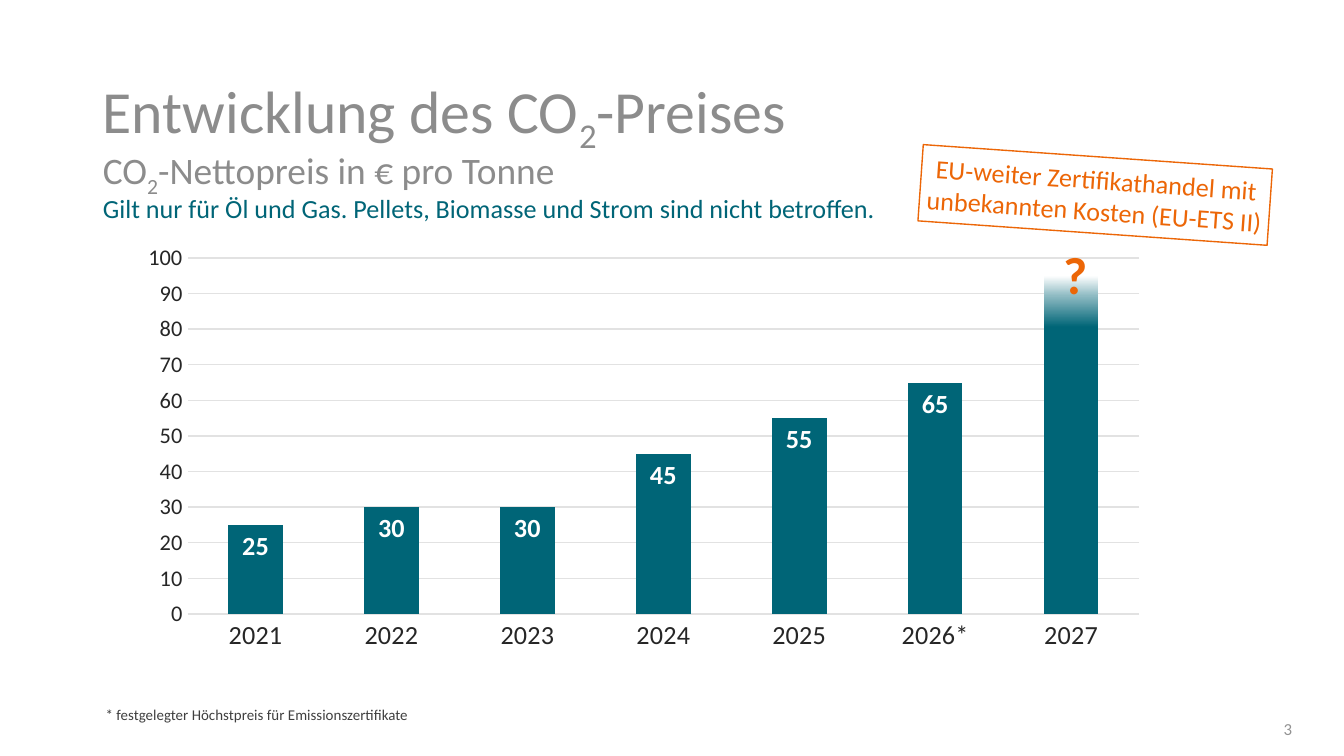
from lxml import etree
from pptx import Presentation
from pptx.chart.data import CategoryChartData
from pptx.dml.color import RGBColor
from pptx.enum.chart import XL_CHART_TYPE, XL_LABEL_POSITION, XL_TICK_MARK
from pptx.enum.shapes import MSO_SHAPE
from pptx.enum.text import MSO_ANCHOR, PP_ALIGN
from pptx.oxml import parse_xml
from pptx.oxml.ns import nsdecls, qn
from pptx.util import Pt

STACKED = XL_CHART_TYPE.COLUMN_STACKED
TOP, MID, LOW = MSO_ANCHOR.TOP, MSO_ANCHOR.MIDDLE, MSO_ANCHOR.BOTTOM
LEFT, MIDDLE = PP_ALIGN.LEFT, PP_ALIGN.CENTER
FONT = "Calibri"
TEAL, ORANGE, GREY, PALE, DARK, INK, WHITE = (
    "006577", "EC6607", "8C8C8C", "E2E2E2", "262626", "3F3F3F", "FFFFFF")

# Each line of the title: size and runs; "_" marks a subscript
TITLE = [(32, ["Entwicklung des CO", "_2", "-Preises"]),
         (20, ["CO", "_2", "-Nettopreis in € pro Tonne"])]
TITLE_BOX = (48, 32, 652, 38)

# text, box, size, colour, bold, align, anchor, wrap, insets (l, t, r, b)
INSET = (7.2, 3.6, 7.2, 3.6)
TEXTS = [
    ("Gilt nur für Öl und Gas. Pellets, Biomasse und Strom sind nicht betroffen.",
     (48, 99.5, 445, 41), 14, TEAL, False, LEFT, TOP, True, INSET),
    ("* festgelegter Höchstpreis für Emissionszertifikate",
     (48, 373.5, 495, 17.5), 8, INK, False, LEFT, LOW, True, (8.6, 3.6, 7.2, 3.6)),
    ("?", (562.5, 126, 18, 41), 28, ORANGE, True, MIDDLE, MID, True, INSET),
    ("3", (686, 381, 8, 19), 9, "929292", False, MIDDLE, MID, False, (0, 0, 0, 0)),
]
NOTE = "EU-weiter Zertifikathandel mit unbekannten Kosten (EU-ETS II)"
NOTE_BOX = (493, 84, 187.5, 41)

YEARS = ["2021", "2022", "2023", "2024", "2025", "2026*", "2027"]
PRICES = [25, 30, 30, 45, 55, 65, 75]
OPEN = [None] * 6 + [20]
FADE = [(0, WHITE), (28, "8FBBC3"), (72, TEAL), (100, TEAL)]
CHART_BOX = (60.5, 126, 556.5, 235.5)
PLOT = {"x": 0.072, "y": 0.052, "w": 0.916, "h": 0.81}


def rgb(code):
    return RGBColor.from_string(code)


def put(item, **values):
    for name, value in values.items():
        setattr(item, name, value)


def style(font, size, color, bold=False):
    put(font, name=FONT, size=Pt(size), bold=bold)
    font.color.rgb = rgb(color)


def place(box):
    return [Pt(n) for n in box]


def set_frame(frame, wrap, anchor, inset):
    left, top, right, low = place(inset)
    put(frame, word_wrap=wrap, vertical_anchor=anchor, margin_left=left,
        margin_top=top, margin_right=right, margin_bottom=low)


def write(shape, text, size, color, bold, align, anchor, wrap, inset):
    set_frame(shape.text_frame, wrap, anchor, inset)
    para = shape.text_frame.paragraphs[0]
    para.alignment = align
    run = para.add_run()
    run.text = text
    style(run.font, size, color, bold)


def add_title(slide):
    frame = slide.shapes.add_textbox(*place(TITLE_BOX)).text_frame
    set_frame(frame, True, TOP, (7.2, 8, 7.2, 3.6))
    para = frame.paragraphs[0]
    para.line_spacing = 0.9
    for row, (size, parts) in enumerate(TITLE):
        if row:
            para.add_line_break()
        for part in parts:
            run = para.add_run()
            run.text = part.lstrip("_")
            style(run.font, size, GREY)
            if part.startswith("_"):
                run.font._element.set("baseline", "-25000")


def add_chart(slide):
    data = CategoryChartData()
    data.categories = YEARS
    data.add_series("Series 1", PRICES)
    data.add_series("Series 2", OPEN)
    chart = slide.shapes.add_chart(STACKED, *place(CHART_BOX), data).chart
    put(chart, has_legend=False, has_title=False)
    style(chart.font, 10, INK)

    cats, vals = chart.category_axis, chart.value_axis
    for axis, size in ((cats, 14), (vals, 12)):
        put(axis, major_tick_mark=XL_TICK_MARK.NONE, minor_tick_mark=XL_TICK_MARK.NONE)
        style(axis.tick_labels.font, size, DARK)
    put(vals, minimum_scale=0, maximum_scale=100, major_unit=10,
        has_major_gridlines=True)
    vals.format.line.fill.background()
    for line in (cats.format.line, vals.major_gridlines.format.line):
        line.color.rgb = rgb(PALE)
        line.width = Pt(0.75)

    plot = chart.plots[0]
    put(plot, gap_width=149, overlap=100, vary_by_categories=False)
    known, unsure = plot.series
    known.format.fill.solid()
    known.format.fill.fore_color.rgb = rgb(TEAL)
    labels = known.data_labels
    put(labels, show_value=True, position=XL_LABEL_POSITION.INSIDE_END)
    style(labels.font, 14, WHITE, True)
    last = len(YEARS) - 1
    labels._element.insert(0, parse_xml(
        f'<c:dLbl {nsdecls("c")}><c:idx val="{last}"/><c:delete val="1"/></c:dLbl>'))

    fill = unsure.format.fill
    fill.gradient()
    fill.gradient_angle = 270
    stops = unsure._element.xpath(".//a:gsLst")[0]
    for stop in list(stops):
        stops.remove(stop)
    for spot, color in FADE:
        stop = etree.SubElement(stops, qn("a:gs"), pos=str(spot * 1000))
        etree.SubElement(stop, qn("a:srgbClr"), val=color)

    area = chart._chartSpace.chart.plotArea
    for old in area.findall(qn("c:layout")):
        area.remove(old)
    sizes = "".join(f'<c:{k} val="{v}"/>' for k, v in PLOT.items())
    area.insert(0, parse_xml(
        f'<c:layout {nsdecls("c")}><c:manualLayout><c:layoutTarget val="inner"/>'
        f'<c:xMode val="edge"/><c:yMode val="edge"/>{sizes}'
        '</c:manualLayout></c:layout>'))


def add_note(slide):
    note = slide.shapes.add_shape(MSO_SHAPE.RECTANGLE, *place(NOTE_BOX))
    note.rotation = 4
    note.shadow.inherit = False
    note.fill.solid()
    note.fill.fore_color.rgb = rgb(WHITE)
    note.line.color.rgb = rgb(ORANGE)
    note.line.width = Pt(0.75)
    write(note, NOTE, 14, ORANGE, False, MIDDLE, TOP, True, (2.9, 3.6, 2.9, 3.6))


def main():
    deck = Presentation()
    put(deck, slide_width=Pt(720), slide_height=Pt(405))
    slide = deck.slides.add_slide(deck.slide_layouts[6])
    add_title(slide)
    add_chart(slide)
    add_note(slide)
    for text, box, *look in TEXTS:
        write(slide.shapes.add_textbox(*place(box)), text, *look)
    deck.save("out.pptx")


if __name__ == "__main__":
    main()
